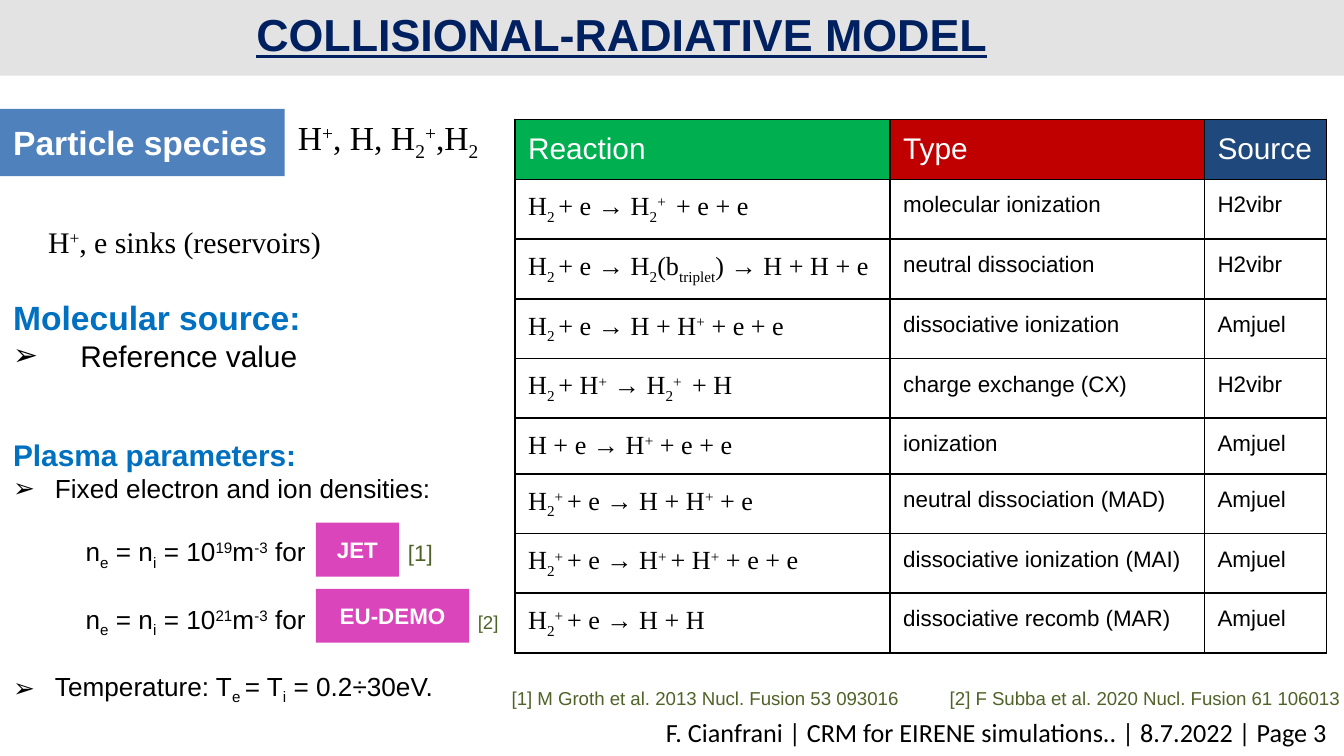
from dataclasses import dataclass, replace

from lxml import etree
from pptx import Presentation
from pptx.dml.color import RGBColor
from pptx.enum import shapes, text
from pptx.oxml import ns
from pptx.util import Cm, Pt

LEFT, CENTER, RIGHT = text.PP_ALIGN.LEFT, text.PP_ALIGN.CENTER, text.PP_ALIGN.RIGHT
ARROW = "➢"


@dataclass(frozen=True)
class Style:
    size: int
    color: str = "000000"
    font: str = "Arial"
    bold: bool = False
    underline: bool = False


@dataclass(frozen=True)
class Theme:
    band: str = "E3E3E3"
    species: str = "4F81BD"
    device: str = "DB45BB"
    border: str = "000000"
    headers: tuple = ("00B050", "C00000", "1F497D")
    title: Style = Style(24, "002060", bold=True, underline=True)
    footer: Style = Style(14, font="Calibri")
    header: Style = Style(16, "FFFFFF")
    formula: Style = Style(14, font="Times New Roman")
    cell: Style = Style(12)
    section: Style = Style(18, "0070C0", bold=True)
    label: Style = Style(18, "FFFFFF", bold=True)
    body: Style = Style(14)
    note: Style = Style(10, "4F6228")


THEME = Theme()


@dataclass(frozen=True)
class Box:
    left: float
    top: float
    width: float
    height: float

    def emu(self) -> tuple:
        return Cm(self.left), Cm(self.top), Cm(self.width), Cm(self.height)


@dataclass(frozen=True)
class Line:
    """Spans are (text, style) pairs; "~_2~" is a subscript, "~^+~" a superscript."""
    spans: tuple
    before: int = 0
    bullet: str = ""
    hang: float = 0
    tabs: tuple = ()
    align: int = LEFT


def add_child(parent, tag: str, **attrs: str):
    return etree.SubElement(parent, ns.qn(tag), attrs)


def add_span(p, content: str, style: Style) -> None:
    for part in filter(None, content.split("~")):
        shift = {"_": "-25000", "^": "30000"}.get(part[0])
        r = p.add_run()
        r.text = part[1:] if shift else part
        f = r.font
        f.size, f.name, f.bold, f.underline = Pt(style.size), style.font, style.bold, style.underline
        f.color.rgb = RGBColor.from_string(style.color)
        if shift:
            r._r.get_or_add_rPr().set("baseline", shift)


def write(tf, *lines: Line) -> None:
    for i, line in enumerate(lines):
        p = tf.add_paragraph() if i else tf.paragraphs[0]
        pPr = p._p.get_or_add_pPr()
        if line.bullet:
            pPr.set("marL", str(Cm(line.hang)))
            pPr.set("indent", str(-Cm(line.hang)))
            add_child(pPr, "a:buFont", typeface=THEME.body.font)
            add_child(pPr, "a:buChar", char=line.bullet)
        if line.tabs:
            tabs = add_child(pPr, "a:tabLst")
            for pos in line.tabs:
                add_child(tabs, "a:tab", pos=str(Cm(pos)), algn="l")
        p.alignment = line.align
        if line.before:
            p.space_before = Pt(line.before)
        for content, style in line.spans:
            add_span(p, content, style)


def add_text(s, box: Box, *lines: Line, anchor=text.MSO_ANCHOR.TOP) -> None:
    tf = s.shapes.add_textbox(*box.emu()).text_frame
    tf.word_wrap = True
    tf.vertical_anchor = anchor
    write(tf, *lines)


def add_block(s, box: Box, fill: str, *lines: Line) -> None:
    sp = s.shapes.add_shape(shapes.MSO_SHAPE.RECTANGLE, *box.emu())
    sp.shadow.inherit = False
    sp.fill.solid()
    sp.fill.fore_color.rgb = RGBColor.from_string(fill)
    sp.line.fill.background()
    tf = sp.text_frame
    tf.word_wrap = True
    tf.vertical_anchor = text.MSO_ANCHOR.TOP
    tf.margin_left = tf.margin_right = tf.margin_top = tf.margin_bottom = Cm(0.25)
    write(tf, *lines)


def format_cell(cell, content: str, style: Style, fill: str = "") -> None:
    cell.margin_left = cell.margin_right = cell.margin_top = Cm(0.25)
    cell.margin_bottom = Cm(0.15)
    if fill:
        cell.fill.solid()
        cell.fill.fore_color.rgb = RGBColor.from_string(fill)
    else:
        cell.fill.background()
    tcPr = cell._tc.get_or_add_tcPr()
    for i, side in enumerate(("a:lnL", "a:lnR", "a:lnT", "a:lnB")):
        ln = add_child(tcPr, side, w=str(Pt(1)))
        add_child(add_child(ln, "a:solidFill"), "a:srgbClr", val=THEME.border)
        tcPr.insert(i, ln)
    write(cell.text_frame, Line(((content, style),)))


HEADERS = ("Reaction", "Type", "Source")
REACTIONS = (
    ("H~_2 ~+ e → H~_2~^+ ~ + e + e", "molecular ionization", "H2vibr"),
    ("H~_2 ~+ e → H~_2~(b~_triplet~) → H + H + e", "neutral dissociation", "H2vibr"),
    ("H~_2 ~+ e → H + H~^+~ + e + e", "dissociative ionization", "Amjuel"),
    ("H~_2 ~+ H~^+~ → H~_2~^+ ~ + H", "charge exchange (CX)", "H2vibr"),
    ("H + e → H~^+~ + e + e", "ionization", "Amjuel"),
    ("H~_2~^+ ~+ e → H + H~^+~ + e", "neutral dissociation (MAD)", "Amjuel"),
    ("H~_2~^+ ~+ e → H~^+ ~+ H~^+~ + e + e", "dissociative ionization (MAI)", "Amjuel"),
    ("H~_2~^+ ~+ e → H + H", "dissociative recomb (MAR)", "Amjuel"),
)


def add_reactions(s, left: float, top: float) -> None:
    widths, height, plain_height = (7.09, 5.94, 2.31), 1.13, 1.05
    heights = [height] + [height if "_" in row[0] else plain_height for row in REACTIONS]
    box = Box(left, top, sum(widths), sum(heights))
    tbl = s.shapes.add_table(len(heights), len(widths), *box.emu()).table
    tbl.first_row = tbl.horz_banding = False
    for col, width in zip(tbl.columns, widths):
        col.width = Cm(width)
    for row, row_height in zip(tbl.rows, heights):
        row.height = Cm(row_height)
    for c, (header, fill) in enumerate(zip(HEADERS, THEME.headers)):
        format_cell(tbl.cell(0, c), header, THEME.header, fill)
    for r, row in enumerate(REACTIONS, 1):
        for c, content in enumerate(row):
            format_cell(tbl.cell(r, c), content, THEME.cell if c else THEME.formula)


def density(exponent: int, mark: str, tab: float, mark_size: int) -> Line:
    formula = f"\tn~_e~ = n~_i~ = 10~^{exponent}~m~^-3~ for\t"
    return Line(((formula, THEME.body), (mark, replace(THEME.note, size=mark_size))),
                before=17, tabs=(1.37, tab))


def main() -> None:
    prs = Presentation()
    prs.slide_width, prs.slide_height = Cm(25.4), Cm(14.29)
    s = prs.slides.add_slide(prs.slide_layouts[6])
    t = THEME

    add_block(s, Box(0, 0, 25.4, 1.43), t.band)
    add_text(s, Box(5.05, 13.41, 20.29, 0.86), Line(
        (("F. Cianfrani | CRM for EIRENE simulations.. | 8.7.2022 | Page 3", t.footer),),
        align=RIGHT))
    add_text(s, Box(1.27, 0.15, 20.96, 0.97),
             Line((("COLLISIONAL-RADIATIVE MODEL", t.title),), align=CENTER),
             anchor=text.MSO_ANCHOR.MIDDLE)
    add_reactions(s, 9.73, 2.26)

    add_text(s, Box(5.38, 2.08, 4.65, 1.02), Line(
        (("H~^+~, H, H~_2~^+~,H~_2", replace(t.formula, size=18)),)))
    add_block(s, Box(0, 2.06, 5.38, 1.27), t.species, Line((("Particle species", t.label),)))
    add_text(s, Box(0.66, 4.11, 6.25, 0.94), Line(
        (("H~^+~, e sinks (reservoirs)", replace(t.formula, size=16)),)))
    add_text(
        s, Box(0, 5.49, 10.03, 8.38),
        Line((("Molecular source:", t.section),)),
        Line((("Reference value", replace(t.body, size=16)),), bullet=ARROW, hang=1.27),
        Line((("Plasma parameters:", replace(t.section, size=16)),), before=34),
        Line((("Fixed electron and ion densities:", t.body),), bullet=ARROW, hang=0.79),
        density(19, "[1]", 7.46, 12),
        density(21, "[2]", 8.78, 10),
        Line((("Temperature: T~_e ~= T~_i~ = 0.2÷30eV.", t.body),),
             before=17, bullet=ARROW, hang=0.79))
    for name, top, width in (("EU-DEMO", 11.13, 2.9), ("JET", 9.88, 1.57)):
        add_block(s, Box(5.97, top, width, 1.02), t.device,
                  Line(((name, replace(t.label, size=12)),), align=CENTER))
    add_text(s, Box(9.42, 12.85, 16.71, 1.27), Line(
        (("[1] M Groth et al. 2013 Nucl. Fusion 53 093016\t"
          "[2] F Subba et al. 2020 Nucl. Fusion 61 106013", t.note),), tabs=(8.28,)))

    prs.save("out.pptx")


if __name__ == "__main__":
    main()
